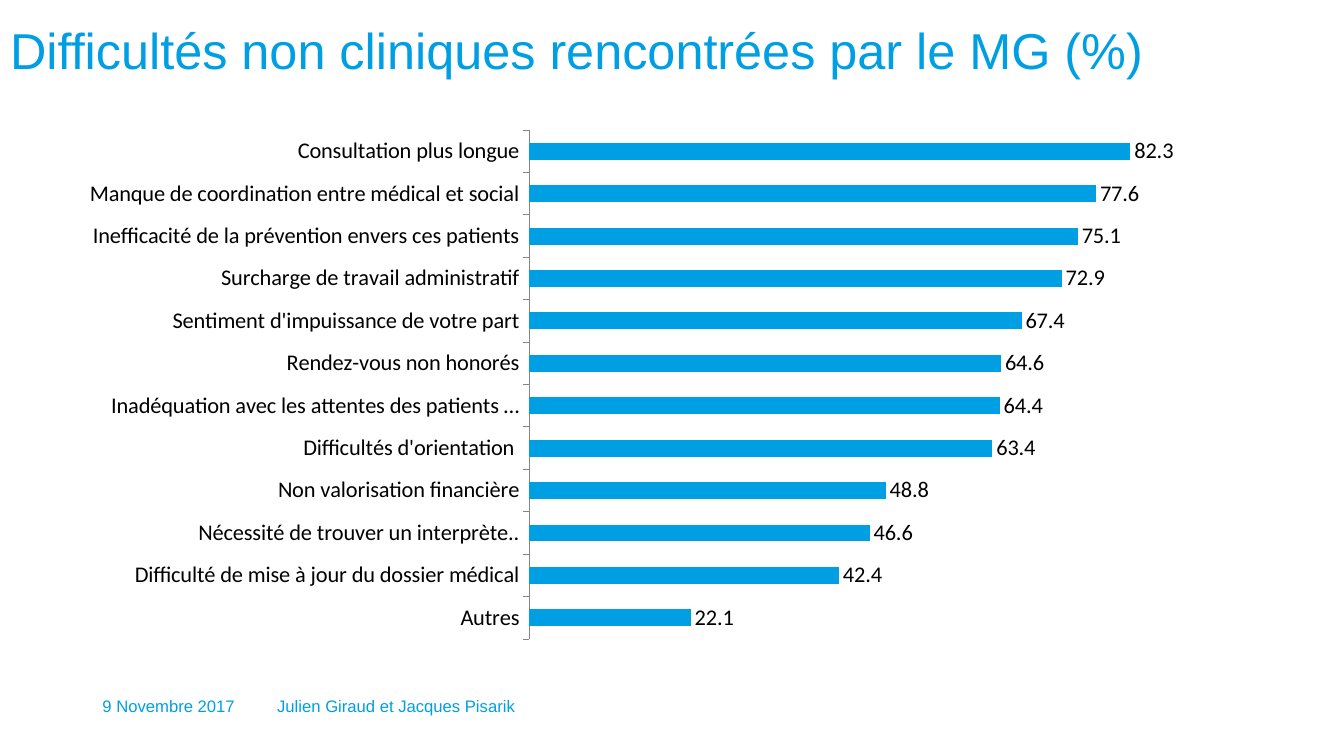
from lxml import etree
from pptx import Presentation
from pptx.chart.data import CategoryChartData
from pptx.dml.color import RGBColor
from pptx.enum.chart import XL_CHART_TYPE, XL_LABEL_POSITION, XL_TICK_MARK
from pptx.enum.text import MSO_ANCHOR, MSO_AUTO_SIZE, PP_ALIGN
from pptx.oxml import parse_xml
from pptx.oxml.ns import nsdecls, qn
from pptx.util import Pt

BAR_CLUSTERED = XL_CHART_TYPE.BAR_CLUSTERED
OUTSIDE_END = XL_LABEL_POSITION.OUTSIDE_END
TICK_OUTSIDE, TICK_NONE = XL_TICK_MARK.OUTSIDE, XL_TICK_MARK.NONE
TOP, MIDDLE = MSO_ANCHOR.TOP, MSO_ANCHOR.MIDDLE
NO_AUTOFIT = MSO_AUTO_SIZE.NONE
LEFT = PP_ALIGN.LEFT

COLORS = {"blue": "009FE3", "black": "000000", "axis": "868686"}

TITLE = "Difficultés non cliniques rencontrées par le MG (%)"
FOOTERS = [  # text, left, width
    ("9 Novembre 2017", 66, 114),
    ("Julien Giraud et Jacques Pisarik", 190.8, 190),
]
DIFFICULTIES = [  # listed from the bottom bar to the top one
    ("Autres", 22.1),
    ("Difficulté de mise à jour du dossier médical", 42.4),
    ("Nécessité de trouver un interprète..", 46.6),
    ("Non valorisation financière", 48.8),
    ("Difficultés d'orientation ", 63.4),
    ("Inadéquation avec les attentes des patients …", 64.4),
    ("Rendez-vous non honorés", 64.6),
    ("Sentiment d'impuissance de votre part", 67.4),
    ("Surcharge de travail administratif", 72.9),
    ("Inefficacité de la prévention envers ces patients", 75.1),
    ("Manque de coordination entre médical et social", 77.6),
    ("Consultation plus longue", 82.3),
]

SLIDE_SIZE = (960, 540)
TITLE_BOX = (0, 3.6, 930, 104.4)
CHART_BOX = (47.5, 85, 816.5, 379.5)
FOOTER_TOP, FOOTER_HEIGHT = 491.8, 27.4
PLOT_LAYOUT = {"x": 0.405, "y": 0.021, "w": 0.575, "h": 0.958}  # shares of the chart


def color(name):
    return RGBColor.from_string(COLORS[name])


def style_font(font, size, name, color_name):
    font.size, font.name = Pt(size), name
    font.color.rgb = color(color_name)


def fill_placeholder(box, text, frame, size, anchor, line_spacing, top_inset=3.6):
    box.left, box.top, box.width, box.height = map(Pt, frame)
    text_frame = box.text_frame
    text_frame.word_wrap = True
    text_frame.auto_size = NO_AUTOFIT
    text_frame.vertical_anchor = anchor
    text_frame.margin_left = text_frame.margin_right = Pt(7.2)
    text_frame.margin_top, text_frame.margin_bottom = Pt(top_inset), Pt(3.6)
    para = text_frame.paragraphs[0]
    properties = para._p.get_or_add_pPr()
    properties.set("marL", "0")
    properties.set("indent", "0")
    etree.SubElement(properties, qn("a:buNone"))
    para.alignment = LEFT
    para.line_spacing = line_spacing
    para.space_before = Pt(0)
    span = para.add_run()
    span.text = text
    style_font(span.font, size, "Arial", "blue")


def place_plot(chart):
    """Fix the inner plot area inside the chart."""
    plot_area = chart._chartSpace.chart.plotArea
    for layout in plot_area.findall(qn("c:layout")):
        plot_area.remove(layout)
    parts = '<c:layoutTarget val="inner"/><c:xMode val="edge"/><c:yMode val="edge"/>'
    parts += "".join(f'<c:{key} val="{share}"/>' for key, share in PLOT_LAYOUT.items())
    plot_area.insert(0, parse_xml(
        f'<c:layout {nsdecls("c")}><c:manualLayout>{parts}</c:manualLayout></c:layout>'))


def add_difficulty_chart(slide):
    data = CategoryChartData()
    data.categories = [label for label, _ in DIFFICULTIES]
    data.add_series("Series 1", [value for _, value in DIFFICULTIES])
    chart = slide.shapes.add_chart(BAR_CLUSTERED, *map(Pt, CHART_BOX), data).chart
    chart.has_title = chart.has_legend = False
    style_font(chart.font, 10, "Calibri", "black")
    place_plot(chart)

    category_axis = chart.category_axis
    category_axis.major_tick_mark = TICK_OUTSIDE
    category_axis.minor_tick_mark = TICK_NONE
    category_axis.has_major_gridlines = False
    category_axis.format.line.color.rgb = color("axis")
    category_axis.format.line.width = Pt(0.75)
    style_font(category_axis.tick_labels.font, 16, "Calibri", "black")

    value_axis = chart.value_axis
    value_axis.visible = value_axis.has_major_gridlines = False
    value_axis.minimum_scale, value_axis.maximum_scale = 0, 90

    plot = chart.plots[0]
    plot.gap_width = 150
    plot.vary_by_categories = False
    bars = plot.series[0]
    bars.invert_if_negative = False
    bars.format.fill.solid()
    bars.format.fill.fore_color.rgb = color("blue")
    labels = bars.data_labels
    labels.show_value = True
    labels.position = OUTSIDE_END
    style_font(labels.font, 16, "Calibri", "black")


def main():
    deck = Presentation()
    deck.slide_width, deck.slide_height = map(Pt, SLIDE_SIZE)
    slide = deck.slides.add_slide(deck.slide_layouts.get_by_name("Two Content"))
    title, *footer_boxes = slide.placeholders
    fill_placeholder(title, TITLE, TITLE_BOX, size=36, anchor=TOP,
                     line_spacing=0.9, top_inset=15)
    for box, (text, left, width) in zip(footer_boxes, FOOTERS):
        frame = (left, FOOTER_TOP, width, FOOTER_HEIGHT)
        fill_placeholder(box, text, frame, size=11.9, anchor=MIDDLE, line_spacing=0.8)
    add_difficulty_chart(slide)
    deck.save("out.pptx")


if __name__ == "__main__":
    main()
